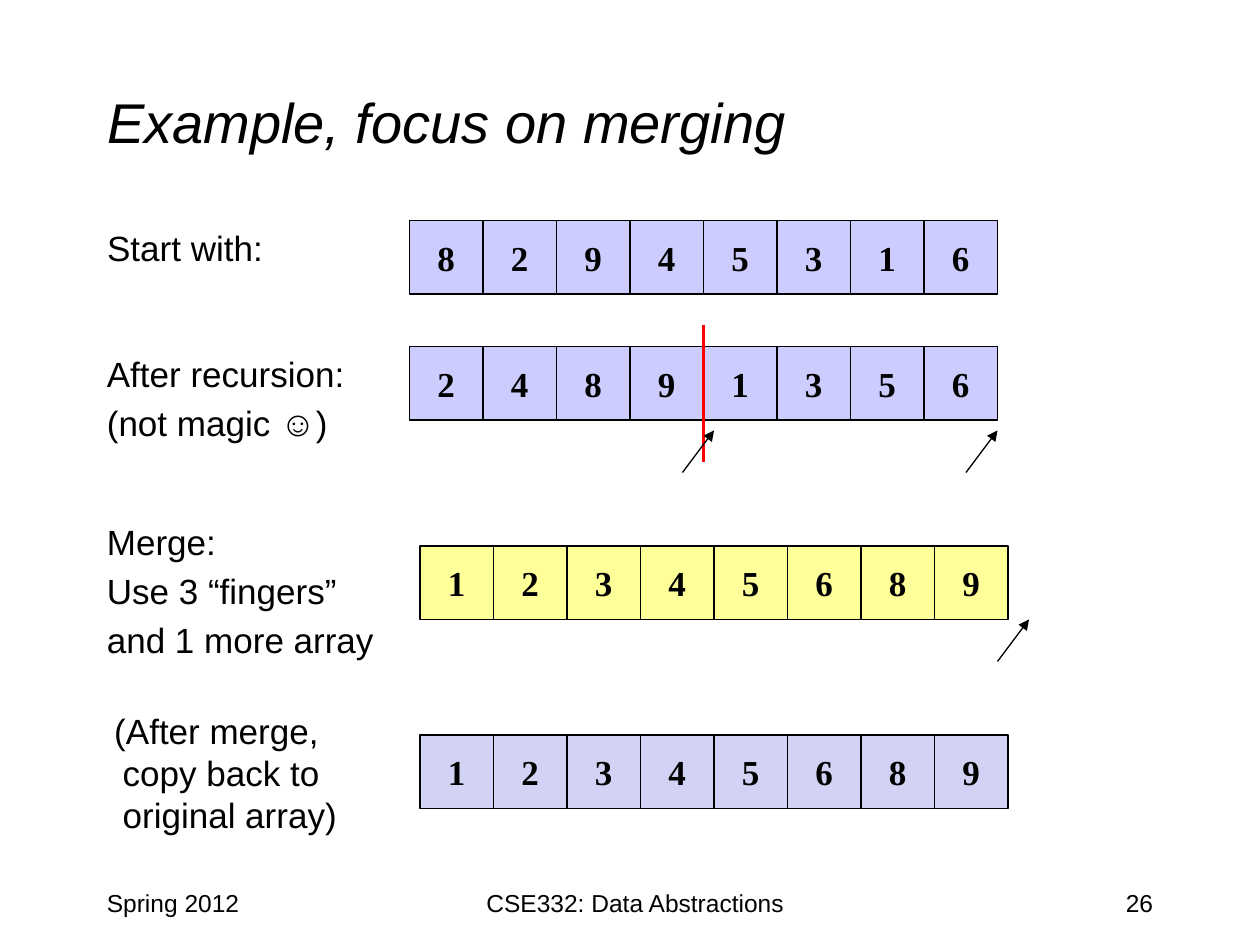
from lxml.etree import SubElement
from pptx import Presentation
from pptx.dml.color import RGBColor
from pptx.enum.shapes import MSO_CONNECTOR, MSO_SHAPE
from pptx.enum.text import MSO_ANCHOR, MSO_AUTO_SIZE, PP_ALIGN
from pptx.oxml.ns import qn
from pptx.util import Pt

BLACK = RGBColor(0x00, 0x00, 0x00)
RED = RGBColor(0xFF, 0x00, 0x00)
LAVENDER = RGBColor(0xCC, 0xCC, 0xFF)
YELLOW = RGBColor(0xFF, 0xFF, 0x99)
PALE_LAVENDER = RGBColor(0xD2, 0xD2, 0xF4)

CELL = 42
MARGIN = 54
HANGING = 27


class MergeSlide:
    text_font = "Arial"
    cell_font = "Times New Roman"
    text_size = 20

    def __init__(self, presentation):
        self.slide = presentation.slides.add_slide(presentation.slide_layouts[1])
        self.shapes = self.slide.shapes

    def place(self, shape, left, top, width, height):
        shape.left, shape.top = Pt(left), Pt(top)
        shape.width, shape.height = Pt(width), Pt(height)

    def style(self, frame, size, font=text_font, align=PP_ALIGN.LEFT, bold=False, italic=False):
        for paragraph in frame.paragraphs:
            paragraph.alignment = align
            for run in paragraph.runs:
                run.font.name = font
                run.font.size = Pt(size)
                run.font.bold = bold
                run.font.italic = italic
                run.font.color.rgb = BLACK

    def title(self, text, *box):
        heading = self.shapes.title
        self.place(heading, *box)
        heading.text_frame.text = text
        heading.text_frame.vertical_anchor = MSO_ANCHOR.MIDDLE
        self.style(heading.text_frame, 32, italic=True)

    def steps(self, text, *box, first_line=-HANGING, holder=None):
        step = holder or self.shapes.add_textbox(0, 0, 0, 0)
        self.place(step, *box)
        frame = step.text_frame
        frame.text = text
        frame.word_wrap = True
        frame.auto_size = MSO_AUTO_SIZE.NONE
        self.style(frame, self.text_size)
        for paragraph in frame.paragraphs:
            paragraph.space_before = Pt(4)
            properties = paragraph._p.get_or_add_pPr()
            properties.set("marL", str(Pt(HANGING)))
            properties.set("indent", str(Pt(first_line)))
            SubElement(properties, qn("a:buNone"))

    def footer(self, text, left, width, align):
        note = self.shapes.add_textbox(Pt(left), Pt(504), Pt(width), Pt(36))
        note.text_frame.text = text
        note.text_frame.word_wrap = True
        self.style(note.text_frame, 14, align=align)

    def array(self, values, left, top, fill):
        for index, value in enumerate(values):
            cell = self.shapes.add_shape(
                MSO_SHAPE.RECTANGLE, Pt(left + index * CELL), Pt(top), Pt(CELL), Pt(CELL))
            cell.shadow.inherit = False
            cell.fill.solid()
            cell.fill.fore_color.rgb = fill
            cell.line.color.rgb = BLACK
            cell.line.width = Pt(0.75)
            frame = cell.text_frame
            frame.text = str(value)
            frame.word_wrap = False
            frame.vertical_anchor = MSO_ANCHOR.MIDDLE
            self.style(frame, self.text_size, self.cell_font, PP_ALIGN.CENTER, bold=True)

    def line(self, start, end, color, width):
        connector = self.shapes.add_connector(
            MSO_CONNECTOR.STRAIGHT, *(Pt(value) for value in (*start, *end)))
        connector.line.color.rgb = color
        connector.line.width = Pt(width)
        SubElement(connector._element.spPr, qn("a:effectLst"))
        return connector

    def finger(self, tip_x, tip_y):
        arrow = self.line((tip_x - 18, tip_y + 24), (tip_x, tip_y), BLACK, 0.75)
        SubElement(arrow.line._get_or_add_ln(), qn("a:tailEnd"), type="triangle")


def main():
    presentation = Presentation()
    presentation.slide_width, presentation.slide_height = Pt(720), Pt(540)
    merging = MergeSlide(presentation)

    merging.title("Example, focus on merging", MARGIN, 24, 612, 90)
    merging.steps("Start with:", MARGIN, 126, 114, 78,
                  holder=merging.slide.placeholders[1])
    merging.steps("After recursion:\n(not magic ☺)", MARGIN, 198, 174, 78)
    merging.steps("Merge:\nUse 3 “fingers”\nand 1 more array", MARGIN, 294, 174, 96)
    merging.steps("(After merge, copy back to original array)", 36, 402, 174, 96,
                  first_line=-4.8)

    merged = (1, 2, 3, 4, 5, 6, 8, 9)
    merging.array((8, 2, 9, 4, 5, 3, 1, 6), 234, 126, LAVENDER)
    merging.array((2, 4, 8, 9, 1, 3, 5, 6), 234, 198, LAVENDER)
    merging.array(merged, 240, 312, YELLOW)
    merging.array(merged, 240, 420, PALE_LAVENDER)

    middle = 234 + 4 * CELL
    merging.line((middle, 186), (middle, 264), RED, 2.25)
    for tip in ((408, 246), (570, 246), (588, 354)):
        merging.finger(*tip)

    merging.footer("Spring 2012", MARGIN, 150, PP_ALIGN.LEFT)
    merging.footer("CSE332: Data Abstractions", 228, 270, PP_ALIGN.CENTER)
    merging.footer("26", 516, 150, PP_ALIGN.RIGHT)

    presentation.save("out.pptx")


if __name__ == "__main__":
    main()
